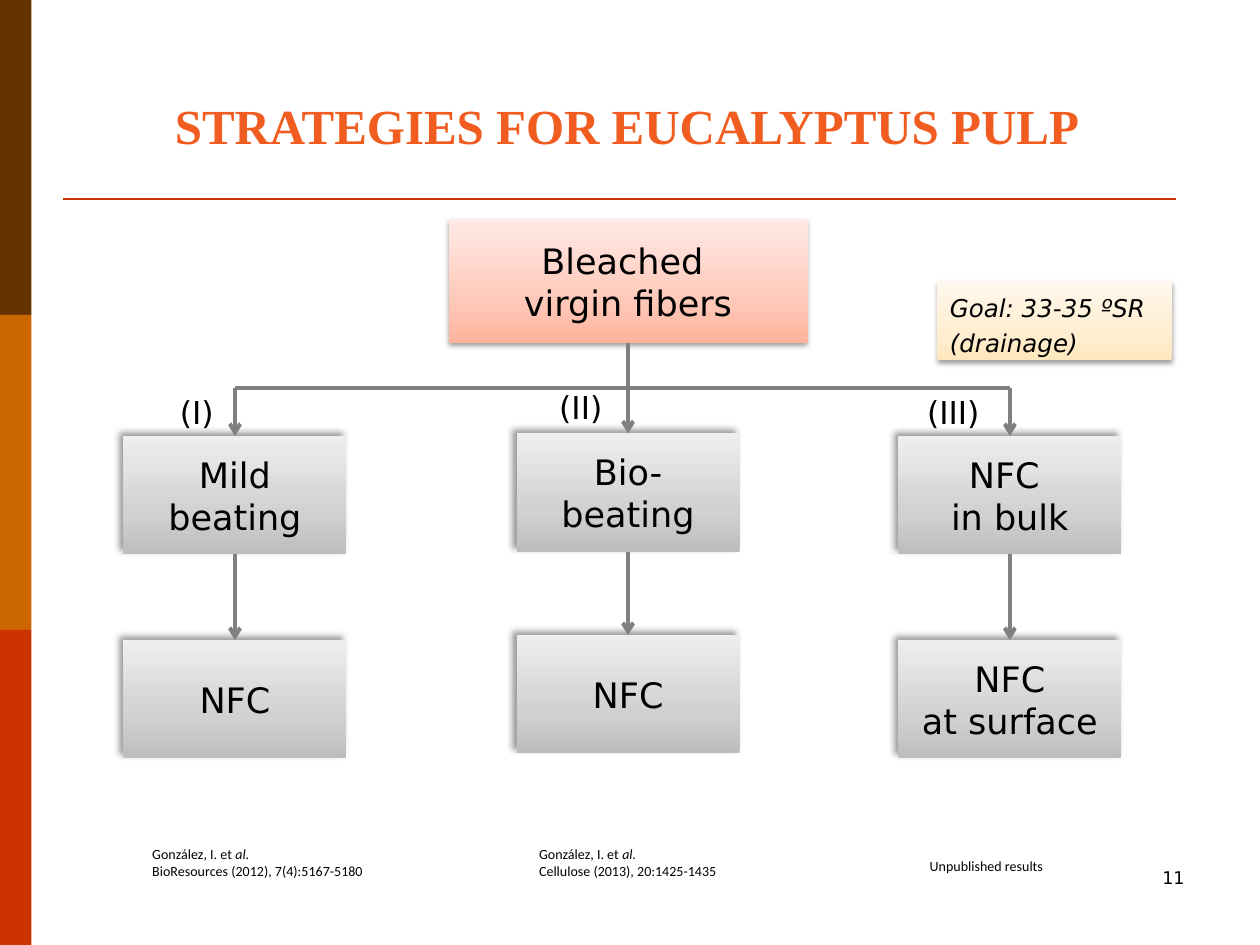
import pptx
import pptx.util
import pptx.dml.color
import pptx.enum.shapes
import pptx.enum.text
import pptx.oxml
import pptx.oxml.ns
from dataclasses import dataclass

Inches, Pt = pptx.util.Inches, pptx.util.Pt
RGB = pptx.dml.color.RGBColor.from_string
ALIGN, ANCHOR = pptx.enum.text.PP_ALIGN, pptx.enum.text.MSO_ANCHOR
RECT = pptx.enum.shapes.MSO_SHAPE.RECTANGLE
STRAIGHT = pptx.enum.shapes.MSO_CONNECTOR.STRAIGHT
NS = pptx.oxml.ns.nsdecls("a")


@dataclass
class Theme:
    body: str = "DejaVu Sans"
    title: str = "Times New Roman"
    citation: str = "Calibri"
    text: str = "000000"
    accent: str = "F15D20"
    rule: str = "CC3300"
    arrow: str = "808080"
    bands: tuple = ("663300", "CC6600", "CC3300")
    # gradients run from bottom to top
    red: tuple = ("FFB39D", "FFC9BA", "FFEAE5")
    grey: tuple = ("BDBDBD", "D1D1D1", "EEEEEE")
    cream: tuple = ("FFE7BD", "FFEED1", "FFF8EE")
    # shadows: opacity %, blur pt, distance pt, direction in degrees
    soft: tuple = (38, 3.1, 1.6, 90)
    raised: tuple = (40, 4, 3, 225)
    title_size: int = 28
    box_size: int = 20
    label_size: int = 18
    goal_size: int = 14
    number_size: int = 10
    citation_size: int = 8


T = Theme()


def write(sp, paragraphs, size, font=T.body, color=T.text, align=ALIGN.LEFT,
          anchor=ANCHOR.TOP, wrap=True, bold=False):
    """Fill a shape with paragraphs; each is a list of (text, italic) runs."""
    tf = sp.text_frame
    tf.word_wrap = wrap
    tf.vertical_anchor = anchor
    for i, runs in enumerate(paragraphs):
        p = tf.paragraphs[0] if i == 0 else tf.add_paragraph()
        p.alignment = align
        for text, italic in runs:
            r = p.add_run()
            r.text = text
            r.font.size, r.font.name = Pt(size), font
            r.font.bold, r.font.italic = bold, italic
            r.font.color.rgb = RGB(color)


def gradient_box(x, y, w, h, colors, shadow):
    sp = s.shapes.add_shape(RECT, Inches(x), Inches(y), Inches(w), Inches(h))
    sp.fill.gradient()
    sp.fill.gradient_angle = 90
    sp.line.fill.background()
    stops = sp.element.spPr.find(".//" + pptx.oxml.ns.qn("a:gsLst"))
    stops.clear()
    for pos, color in zip((0, 35, 100), colors):
        stops.append(pptx.oxml.parse_xml(
            f'<a:gs {NS} pos="{pos * 1000}"><a:srgbClr val="{color}"/></a:gs>'))
    sp.shadow.inherit = False
    alpha, blur, dist, angle = shadow
    sp.element.spPr.find(pptx.oxml.ns.qn("a:effectLst")).append(pptx.oxml.parse_xml(
        f'<a:outerShdw {NS} blurRad="{Pt(blur)}" dist="{Pt(dist)}" dir="{angle * 60000}" '
        f'rotWithShape="0"><a:srgbClr val="000000"><a:alpha val="{alpha * 1000}"/>'
        '</a:srgbClr></a:outerShdw>'))
    return sp


prs = pptx.Presentation()
prs.slide_width, prs.slide_height = Inches(10), Inches(7.5)
s = prs.slides.add_slide(prs.slide_layouts[6])

# Side bands
for i, color in enumerate(T.bands):
    sp = s.shapes.add_shape(RECT, 0, Inches(2.5 * i), Inches(0.25), Inches(2.5))
    sp.fill.solid()
    sp.fill.fore_color.rgb = RGB(color)
    sp.line.fill.background()
    sp.shadow.inherit = False

# Title and slide number
sp = s.shapes.add_textbox(Inches(0.39), Inches(0.52), Inches(9.17), Inches(0.75))
write(sp, [[("STRATEGIES FOR EUCALYPTUS PULP", False)]], T.title_size, T.title,
      T.accent, ALIGN.CENTER, ANCHOR.BOTTOM, bold=True)
sp = s.shapes.add_textbox(Inches(7.17), Inches(6.83), Inches(2.33), Inches(0.5))
write(sp, [[("11", False)]], T.number_size, align=ALIGN.RIGHT)

# Starting material
root = gradient_box(3.56, 1.74, 2.85, 0.98, T.red, T.soft)
write(root, [[("Bleached ", False)], [("virgin fibers", False)]], T.box_size,
      align=ALIGN.CENTER, anchor=ANCHOR.MIDDLE)

# Three strategies, each with two steps: left, tops of the steps, lines of text
BOX_W, BOX_H, BUS_Y = 1.77, 0.94, 3.08
strategies = [
    (0.98, (3.46, 5.08), (["Mild beating"], ["NFC"])),
    (4.10, (3.44, 5.04), (["Bio-beating"], ["NFC"])),
    (7.13, (3.46, 5.08), (["NFC ", "in bulk"], ["NFC", "at surface"])),
]
columns, centers = [], []
for x, tops, steps in strategies:
    boxes = []
    for y, lines in zip(tops, steps):
        sp = gradient_box(x, y, BOX_W, BOX_H, T.grey, T.raised)
        write(sp, [[(line, False)] for line in lines], T.box_size,
              align=ALIGN.CENTER, anchor=ANCHOR.MIDDLE)
        boxes.append(sp)
    columns.append(boxes)
    centers.append(x + BOX_W / 2)

# Lines: each end is a point or a (shape, side) pair
left, middle, right = columns
links = [
    ((0.5, 1.58), (9.33, 1.58), T.rule, 1.5, False),
    ((root, 2), (middle[0], 0), T.arrow, 2.25, True),
    ((centers[0], BUS_Y), (centers[2], BUS_Y), T.arrow, 2.25, False),
    ((centers[0], BUS_Y), (left[0], 0), T.arrow, 2.25, True),
    ((centers[2], BUS_Y), (right[0], 0), T.arrow, 2.25, True),
]
links += [((top, 2), (bottom, 0), T.arrow, 2.25, True) for top, bottom in columns]
for start, end, color, width, arrow in links:
    cn = s.shapes.add_connector(STRAIGHT, 0, 0, 0, 0)
    if isinstance(start[0], float):
        cn.begin_x, cn.begin_y = Inches(start[0]), Inches(start[1])
    else:
        cn.begin_connect(*start)
    if isinstance(end[0], float):
        cn.end_x, cn.end_y = Inches(end[0]), Inches(end[1])
    else:
        cn.end_connect(*end)
    cn.line.color.rgb = RGB(color)
    cn.line.width = Pt(width)
    if arrow:
        cn.line._get_or_add_ln().append(
            pptx.oxml.parse_xml(f'<a:tailEnd {NS} type="arrow"/>'))
    cn.element.spPr.append(pptx.oxml.parse_xml(f"<a:effectLst {NS}/>"))

# Strategy numbers
for x, y, w, text in [(1.33, 3.07, 0.54, "(I)"), (4.34, 3.03, 0.64, "(II)"),
                      (7.26, 3.07, 0.75, "(III)")]:
    sp = s.shapes.add_textbox(Inches(x), Inches(y), Inches(w), Inches(0.4))
    write(sp, [[(text, False)]], T.label_size, wrap=False)

# Citations
authors = [("González, I. et ", False), ("al.", True)]
for x, y, w, h, paragraphs in [
    (1.11, 6.66, 1.88, 0.37, [authors, [("BioResources (2012), 7(4):5167-5180", False)]]),
    (4.18, 6.66, 1.61, 0.37, [authors, [("Cellulose (2013), 20:1425-1435", False)]]),
    (7.28, 6.76, 1.11, 0.24, [[("Unpublished results", False)]]),
]:
    sp = s.shapes.add_textbox(Inches(x), Inches(y), Inches(w), Inches(h))
    write(sp, paragraphs, T.citation_size, T.citation, wrap=False)

# Goal
goal = gradient_box(7.44, 2.23, 1.86, 0.63, T.cream, T.soft)
write(goal, [[("Goal: 33-35 ºSR (drainage)", True)]], T.goal_size)
goal.text_frame.paragraphs[0].line_spacing = Pt(20)

prs.save("out.pptx")
